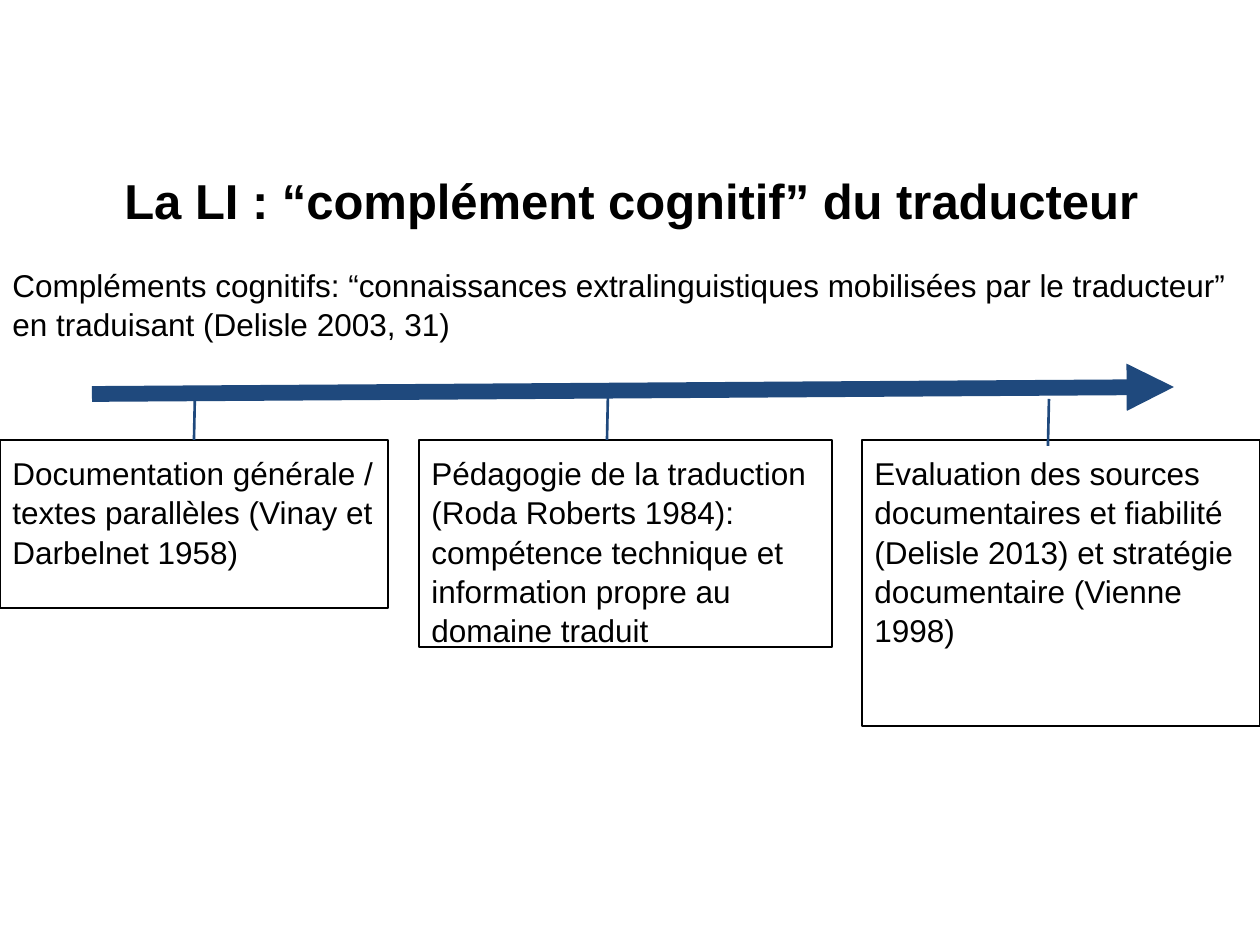
from lxml.etree import SubElement
from pptx import Presentation
from pptx.dml.color import RGBColor
from pptx.enum.shapes import MSO_CONNECTOR as Connector, MSO_SHAPE as Shape
from pptx.enum.text import MSO_ANCHOR as Anchor, PP_ALIGN as Align
from pptx.oxml.ns import qn
from pptx.util import Emu, Pt

PX = 914400 // 126
BLACK, BLUE = "000000", "1F497D"
TITLE = "La LI : “complément cognitif” du traducteur"
DEFINITION = ("Compléments cognitifs: “connaissances extralinguistiques mobilisées "
              "par le traducteur” en traduisant (Delisle 2003, 31)")
STAGE_TOP = 440
STAGES = [
    ("Documentation générale / textes parallèles (Vinay et Darbelnet 1958)", 0, 388, 168),
    ("Pédagogie de la traduction (Roda Roberts 1984): compétence technique et "
     "information propre au domaine traduit", 419, 413, 207),
    ("Evaluation des sources documentaires et fiabilité (Delisle 2013) et stratégie "
     "documentaire (Vienne 1998)", 862, 398, 286),
]
TIMELINE = (92, 394, 1174, 387)
TICKS = [(195, 393, 194, 440), (608, 393, 607, 440), (1049, 399, 1048, 446)]


def px(*lengths):
    return [Emu(length * PX) for length in lengths]


def color(value):
    return RGBColor.from_string(value)


def write(box, text, size=18, bold=False):
    frame = box.text_frame
    frame.word_wrap = True
    frame.vertical_anchor = Anchor.TOP
    frame.margin_left = frame.margin_right = Pt(7.2)
    frame.margin_top = frame.margin_bottom = Pt(7.2)
    para = frame.paragraphs[0]
    para.alignment = Align.LEFT
    para.line_spacing = 1.04
    span = para.add_run()
    span.text = text
    span.font.name = "Arial"
    span.font.size = Pt(size)
    span.font.bold = bold
    span.font.color.rgb = color(BLACK)


def add_line(page, ends, width, arrow=False):
    line = page.shapes.add_connector(Connector.STRAIGHT, *px(*ends))
    line.line.color.rgb = color(BLUE)
    line.line.width = Pt(width)
    if arrow:
        SubElement(line.line._get_or_add_ln(), qn("a:tailEnd"), type="triangle")
    SubElement(line._element.spPr, qn("a:effectLst"))


def main():
    """Build the timeline slide and save it."""
    deck = Presentation()
    deck.slide_width, deck.slide_height = px(1260, 945)
    page = deck.slides.add_slide(deck.slide_layouts[6])

    write(page.shapes.add_textbox(*px(112, 156, 1148, 67)), TITLE, size=28, bold=True)
    add_line(page, TIMELINE, 9, arrow=True)
    for text, left, width, height in STAGES:
        box = page.shapes.add_shape(Shape.RECTANGLE, *px(left, STAGE_TOP, width, height))
        box.shadow.inherit = False
        box.fill.background()
        box.line.color.rgb = color(BLACK)
        box.line.width = Pt(0.75)
        write(box, text)
    for ends in TICKS:
        add_line(page, ends, 1.5)
    write(page.shapes.add_textbox(*px(0, 252, 1260, 88)), DEFINITION)

    deck.save("out.pptx")


if __name__ == "__main__":
    main()
